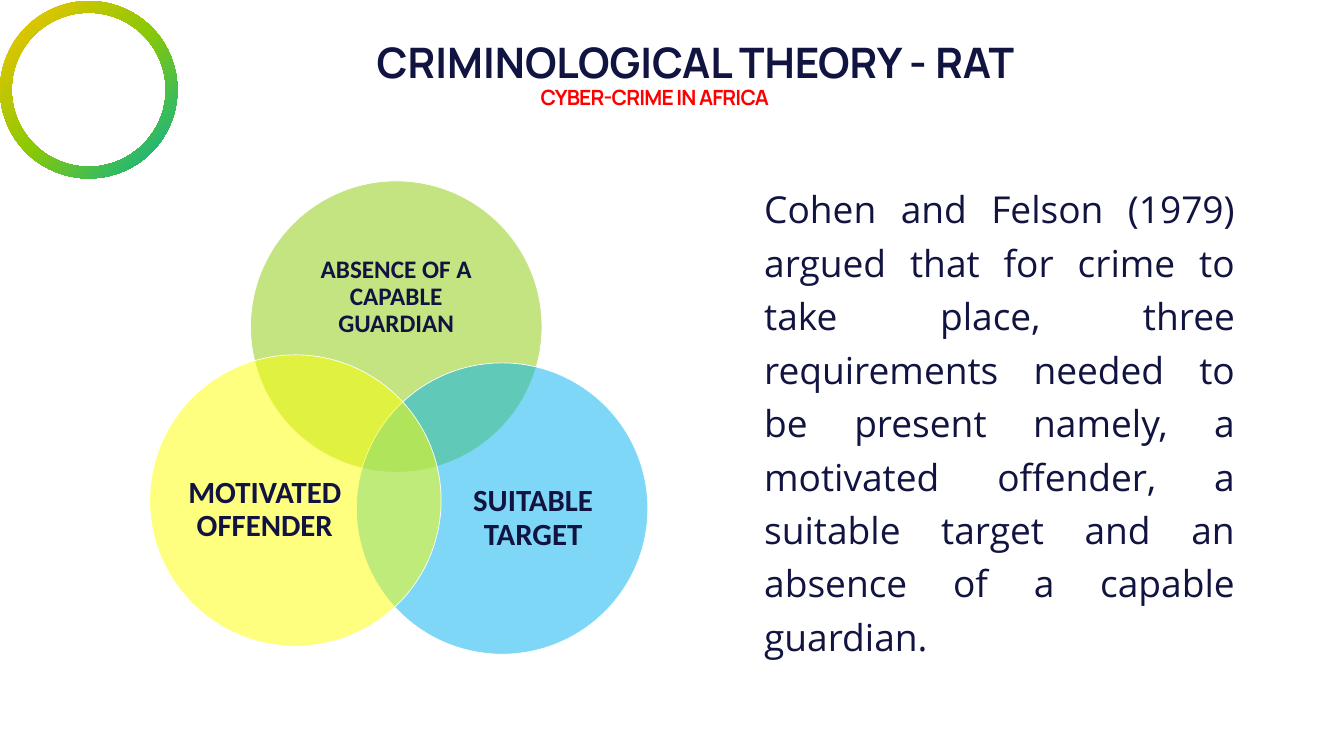
from copy import deepcopy
from dataclasses import dataclass

from lxml.etree import SubElement
from pptx import Presentation
from pptx.dml.color import RGBColor as Rgb
from pptx.enum.shapes import MSO_SHAPE as Preset
from pptx.enum.text import MSO_ANCHOR as Anchor, MSO_AUTO_SIZE as Fit, PP_ALIGN as Align
from pptx.oxml.ns import qn
from pptx.util import Pt

PX = 9144  # EMU per px, 100 px to the inch


@dataclass(frozen=True)
class Theme:
    navy: str = "111340"
    red: str = "FF0000"
    white: str = "FFFFFF"
    green: str = "8BC904"
    blue: str = "00B0F0"
    yellow: str = "FFFF00"
    ring: tuple = ((0, "FDC300"), (0.5, "8BC904"), (0.99, "00B29C"))
    title: int = 60
    subtitle: int = 30
    body: int = 53
    label: int = 44
    small_label: int = 36


theme = Theme()


def add_shape(preset, *bounds):
    """Add a preset shape without shadow, its bounds given in px."""
    shape = page.shapes.add_shape(preset, *(n * PX for n in bounds))
    shape.shadow.inherit = False
    return shape


def add_text(bounds, text, size, font, color=theme.navy, bold=True, inset=(10, 5),
             frame_format=None, para_format=None):
    """Add a one-paragraph text box; the dicts set frame and paragraph attributes."""
    box = page.shapes.add_textbox(*(n * PX for n in bounds))
    frame = box.text_frame
    across, down = (n * PX for n in inset)
    settings = {"word_wrap": True, "margin_left": across, "margin_right": across,
                "margin_top": down, "margin_bottom": down, **(frame_format or {})}
    for name, value in settings.items():
        setattr(frame, name, value)
    para = frame.paragraphs[0]
    for name, value in {"alignment": Align.CENTER, **(para_format or {})}.items():
        setattr(para, name, value)
    span = para.add_run()
    span.text = text
    for name, value in {"size": Pt(size), "name": font, "bold": bold}.items():
        setattr(span.font, name, value)
    span.font.color.rgb = Rgb.from_string(color)
    return span


deck = Presentation()
deck.slide_width, deck.slide_height = 2666 * PX, 1500 * PX
page = deck.slides.add_slide(deck.slide_layouts[6])

# Body text
add_text((1506, 397, 954, 866),
         "Cohen and Felson (1979) argued that for crime to take place, three requirements "
         "needed to be present namely, a motivated offender, a suitable target and an "
         "absence of a capable guardian.",
         theme.body, "Open Sans", bold=False,
         frame_format={"vertical_anchor": Anchor.MIDDLE, "auto_size": Fit.SHAPE_TO_FIT_TEXT},
         para_format={"alignment": Align.JUSTIFY, "line_spacing": 1.2})

# Gradient ring in the corner
ring = add_shape(Preset.DONUT, 0, 2, 352, 352)
ring.adjustments[0] = 0.066
ring.line.fill.background()
ring.fill.gradient()
ring.fill.gradient_angle = 315
stop_list = ring.element.spPr.find(".//" + qn("a:gsLst"))
stop_list.insert(1, deepcopy(stop_list[0]))
for stop, (position, color) in zip(ring.fill.gradient_stops, theme.ring):
    stop.position = position
    stop.color.rgb = Rgb.from_string(color)

# Venn diagram: circle corner, colour, label bounds, label, label size
DIAMETER = 578
venn = [
    ((497, 359), theme.green, (576, 460, 420, 260),
     "ABSENCE OF A CAPABLE GUARDIAN", theme.small_label),
    ((707, 720), theme.blue, (884, 870, 347, 318), "SUITABLE TARGET", theme.label),
    ((297, 704), theme.yellow, (352, 853, 347, 318), "MOTIVATED OFFENDER", theme.label),
]
for corner, color, label_bounds, label, size in venn:
    circle = add_shape(Preset.OVAL, *corner, DIAMETER, DIAMETER)
    circle.fill.solid()
    circle.fill.fore_color.rgb = Rgb.from_string(color)
    tint = circle.element.spPr.find(qn("a:solidFill"))[0]
    SubElement(tint, qn("a:alpha"), val="50000")
    circle.line.color.rgb = Rgb.from_string(theme.white)
    circle.line.width = Pt(1)
    add_text(label_bounds, label, size, "Calibri", inset=(0, 0),
             frame_format={"vertical_anchor": Anchor.MIDDLE},
             para_format={"line_spacing": 0.9})

# Headings
add_text((712, 67, 1335, 111), "CRIMINOLOGICAL THEORY - RAT", theme.title, "Manrope",
         frame_format={"word_wrap": False, "auto_size": Fit.SHAPE_TO_FIT_TEXT})
subtitle = add_text((551, 155, 1496, 66), "CYBER-CRIME IN AFRICA", theme.subtitle,
                    "Manrope", color=theme.red,
                    frame_format={"auto_size": Fit.SHAPE_TO_FIT_TEXT},
                    para_format={"line_spacing": Pt(42)})
subtitle.font._element.set("spc", "-120")

deck.save("out.pptx")
